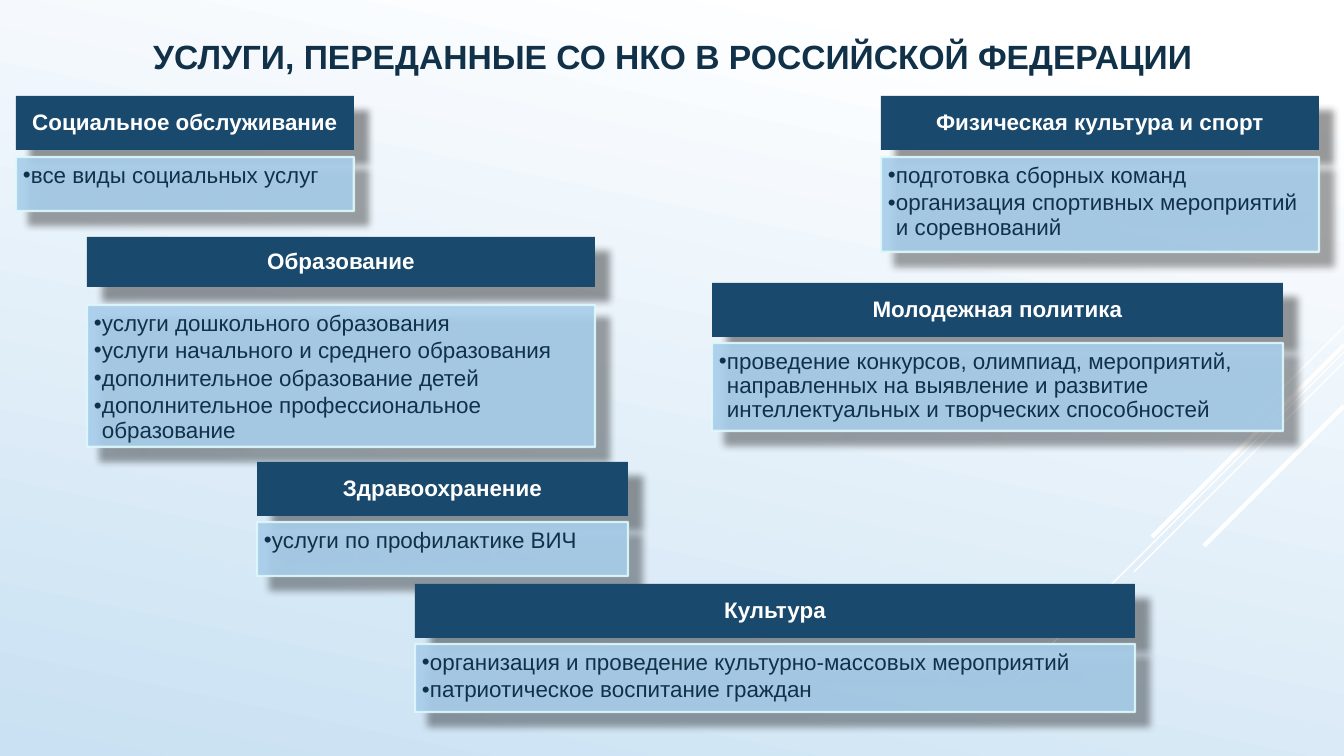
from dataclasses import dataclass

from lxml import etree
from pptx import Presentation
from pptx import util as u
from pptx.dml.color import RGBColor
from pptx.enum import shapes, text
from pptx.oxml import ns

PX = 914400 / 134.4


@dataclass(frozen=True)
class Theme:
    """Colours, font and type sizes of the slide."""
    font: str = "Arial"
    title_size: int = 18
    body_size: int = 12
    ink: str = "113149"
    header: str = "19496D"
    panel: str = "A7CDEA"
    edge: str = "DFF9FB"
    white: str = "FFFFFF"
    sky: str = "C9E1F3"
    shadow: str = "000000"


@dataclass(frozen=True)
class Service:
    """A service area: its header, its items and its place in px."""
    name: str
    items: tuple
    left: int
    top: int
    width: int
    panel_height: int
    header_height: int = 54
    gap: int = 6


THEME = Theme()

SERVICES = (
    Service("Социальное обслуживание", ("все виды социальных услуг",), 16, 96, 338, 54, gap=7),
    Service("Образование", (
        "услуги дошкольного образования",
        "услуги начального и среднего образования",
        "дополнительное образование детей",
        "дополнительное профессиональное образование",
    ), 87, 237, 508, 142, header_height=50, gap=18),
    Service("Здравоохранение", ("услуги по профилактике ВИЧ",), 257, 462, 371, 54),
    Service("Культура", (
        "организация и проведение культурно-массовых мероприятий",
        "патриотическое воспитание граждан",
    ), 415, 584, 720, 68),
    Service("Физическая культура и спорт", (
        "подготовка сборных команд",
        "организация спортивных мероприятий и соревнований",
    ), 881, 96, 438, 95, gap=7),
    Service("Молодежная политика", (
        "проведение конкурсов, олимпиад, мероприятий, направленных на выявление "
        "и развитие интеллектуальных и творческих способностей",
    ), 712, 283, 571, 88),
)

RAYS = ((327, 101, 0.75), (352, 329, 0.75), (362, 210, 0.75), (345, 192, 2.25), (406, 140, 2.25))


def px(*lengths):
    """Turn px lengths into a list of EMU."""
    return [u.Emu(round(length * PX)) for length in lengths]


def rgb(colour):
    """Read a hex colour."""
    return RGBColor.from_string(colour)


def child(parent, tag, **attributes):
    """Append a DrawingML element to a parent."""
    return etree.SubElement(parent, ns.qn(tag), {key: str(value) for key, value in attributes.items()})


def set_font(paragraph, size, colour, bold=False):
    """Set the font of a whole paragraph."""
    font = paragraph.font
    font.name, font.size, font.bold = THEME.font, u.Pt(size), bold
    font.color.rgb = rgb(colour)


def set_bullet(paragraph):
    """Give a paragraph a hanging bullet in the slide font."""
    indent, = px(8)
    properties = paragraph._p.get_or_add_pPr()
    properties.set("marL", str(indent))
    properties.set("indent", str(-indent))
    defaults = properties.find(ns.qn("a:defRPr"))
    defaults.addprevious(etree.Element(ns.qn("a:buFont"), typeface=THEME.font))
    defaults.addprevious(etree.Element(ns.qn("a:buChar"), char="•"))


def paint_background(slide):
    """Fill the slide with a white to sky gradient."""
    fill = slide.background.fill
    fill.gradient()
    fill.gradient_angle = 258
    for stop, position, colour in zip(fill.gradient_stops, (0.1, 1), (THEME.white, THEME.sky)):
        stop.position = position
        stop.color.rgb = rgb(colour)


def add_ray(slide, top, reach, weight):
    """Draw a diagonal ray down from the right edge."""
    ray = slide.shapes.add_connector(
        shapes.MSO_CONNECTOR.STRAIGHT, *px(1344, top, 1344 - reach, top + reach))
    ray.line.color.rgb = rgb(THEME.white)
    ray.line.width = u.Pt(weight)
    child(ray._element.spPr, "a:effectLst")


def add_title(slide, wording):
    """Add the slide title."""
    title = slide.shapes.add_textbox(*px(140, 29, 1087, 54))
    frame = title.text_frame
    frame.word_wrap = False
    frame.auto_size = text.MSO_AUTO_SIZE.SHAPE_TO_FIT_TEXT
    frame.text = wording
    set_font(frame.paragraphs[0], THEME.title_size, THEME.ink, bold=True)


def add_box(slide, place, colour, insets, shadow_distance):
    """Add a filled rectangle with a soft shadow."""
    box = slide.shapes.add_shape(shapes.MSO_SHAPE.RECTANGLE, *px(*place))
    box.fill.solid()
    box.fill.fore_color.rgb = rgb(colour)
    box.line.fill.background()
    box.shadow.inherit = False
    effects = box._element.spPr.find(ns.qn("a:effectLst"))
    shadow = child(effects, "a:outerShdw", blurRad=u.Pt(4), dist=u.Pt(shadow_distance),
                   dir=2700000, algn="tl", rotWithShape=0)
    child(child(shadow, "a:srgbClr", val=THEME.shadow), "a:alpha", val=40000)
    frame = box.text_frame
    frame.word_wrap = True
    frame.margin_left, frame.margin_top, frame.margin_right, frame.margin_bottom = px(*insets)
    return box


def add_header(slide, service):
    """Add the dark header of a service."""
    place = service.left, service.top, service.width, service.header_height
    header = add_box(slide, place, THEME.header, (9, 5, 9, 5), 11)
    frame = header.text_frame
    frame.vertical_anchor = text.MSO_ANCHOR.MIDDLE
    frame.text = service.name
    heading = frame.paragraphs[0]
    heading.alignment = text.PP_ALIGN.CENTER
    heading.line_spacing = 0.9
    set_font(heading, THEME.body_size, THEME.white, bold=True)


def add_panel(slide, service):
    """Add the light panel with the bulleted items of a service."""
    top = service.top + service.header_height + service.gap
    place = service.left, top, service.width, service.panel_height
    panel = add_box(slide, place, THEME.panel, (7, 7, 9, 11), 10)
    panel.line.color.rgb = rgb(THEME.edge)
    panel.line.width = u.Pt(1.25)
    for colour in panel._element.spPr.findall(".//" + ns.qn("a:solidFill") + "/" + ns.qn("a:srgbClr")):
        child(colour, "a:alpha", val=90000)
    frame = panel.text_frame
    frame.vertical_anchor = text.MSO_ANCHOR.TOP
    frame.text = "\n".join(service.items)
    for item in frame.paragraphs:
        item.alignment = text.PP_ALIGN.LEFT
        item.line_spacing = 0.9
        item.space_after = u.Pt(1.8)
        set_font(item, THEME.body_size, THEME.ink)
        set_bullet(item)


def main():
    """Build the slide and save it."""
    deck = Presentation()
    deck.slide_width, deck.slide_height = px(1344, 756)
    slide = deck.slides.add_slide(deck.slide_layouts[6])
    paint_background(slide)
    for ray in RAYS:
        add_ray(slide, *ray)
    add_title(slide, "УСЛУГИ, ПЕРЕДАННЫЕ СО НКО В РОССИЙСКОЙ ФЕДЕРАЦИИ")
    for service in SERVICES:
        add_header(slide, service)
        add_panel(slide, service)
    deck.save("out.pptx")


if __name__ == "__main__":
    main()
